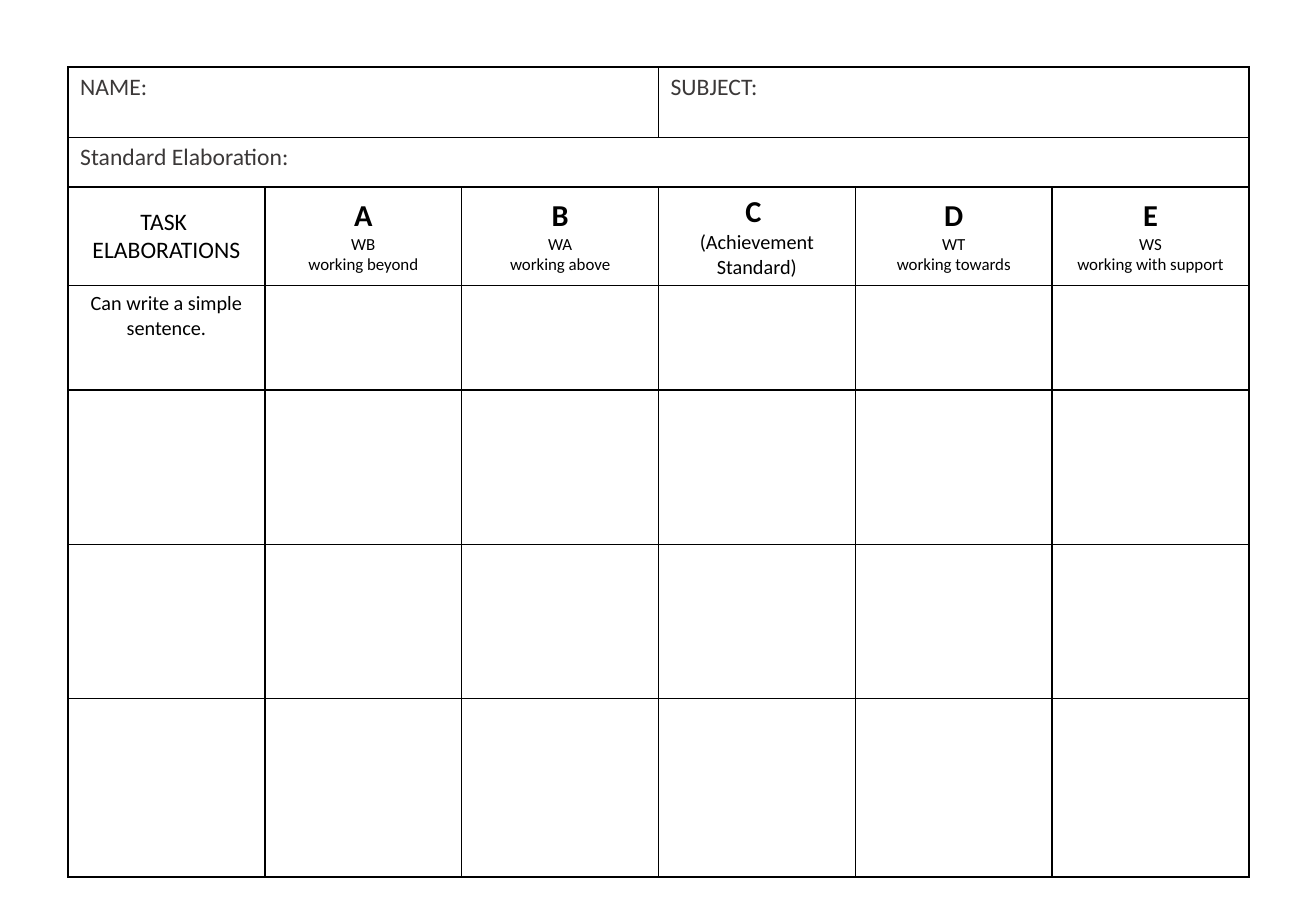
from lxml import etree
from pptx import Presentation
from pptx.dml.color import RGBColor
from pptx.enum.text import MSO_ANCHOR, PP_ALIGN
from pptx.oxml.ns import qn
from pptx.util import Inches, Pt

LEFT, CENTER = PP_ALIGN.LEFT, PP_ALIGN.CENTER
TOP, MIDDLE = MSO_ANCHOR.TOP, MSO_ANCHOR.MIDDLE
BLACK = RGBColor(0, 0, 0)
GREY = RGBColor(0x3B, 0x38, 0x38)
WHITE = RGBColor(255, 255, 255)
FONT = "Calibri"

FIELDS = [
    (0, 0, 2, "NAME:"),
    (0, 3, 5, "SUBJECT:"),
    (1, 0, 5, "Standard Elaboration:"),
]
TASK = ["TASK ", "ELABORATIONS"]
GRADES = [
    ("A", 10, ["WB", "working beyond"]),
    ("B", 10, ["WA", "working above"]),
    ("C ", 12, ["(Achievement Standard)"]),
    ("D", 10, ["WT", "working towards"]),
    ("E", 10, ["WS", "working with support"]),
]
GOALS = ["Can write a simple sentence."]
ROWS = [0.58, 0.41, 0.81, 0.86, 1.27, 1.27, 1.47]
COLS = 6
COL_W = 1.62
HEAD_ROW, GOAL_ROW = 2, 3


def write(cell, lines, size=14, color=BLACK, align=CENTER, anchor=TOP, lead=None):
    cell.vertical_anchor = anchor
    frame = cell.text_frame
    for i, line in enumerate(lines):
        para = frame.paragraphs[0] if i == 0 else frame.add_paragraph()
        para.alignment = align
        run = para.add_run()
        run.text = line
        first = lead is not None and i == 0
        run.font.size = Pt(lead if first else size)
        run.font.bold = first
        run.font.name = FONT
        run.font.color.rgb = color


def frame_cell(cell):
    props = cell._tc.get_or_add_tcPr()
    for side in ("lnL", "lnR", "lnT", "lnB"):
        line = etree.SubElement(props, qn("a:" + side), w=str(Pt(1)))
        fill = etree.SubElement(line, qn("a:solidFill"))
        etree.SubElement(fill, qn("a:srgbClr"), val=str(BLACK))
    cell.fill.solid()
    cell.fill.fore_color.rgb = WHITE


def main():
    deck = Presentation()
    deck.slide_width, deck.slide_height = Inches(10.83), Inches(7.5)
    slide = deck.slides.add_slide(deck.slide_layouts[6])
    table = slide.shapes.add_table(
        len(ROWS), COLS, Inches(0.56), Inches(0.55),
        Inches(COL_W * COLS), Inches(sum(ROWS))).table
    table.first_row = table.horz_banding = False
    for col in table.columns:
        col.width = Inches(COL_W)
    for row, height in zip(table.rows, ROWS):
        row.height = Inches(height)
    for cell in table.iter_cells():
        frame_cell(cell)

    for row, start, end, label in FIELDS:
        cell = table.cell(row, start)
        cell.merge(table.cell(row, end))
        write(cell, [label], color=GREY, align=LEFT)

    write(table.cell(HEAD_ROW, 0), TASK, anchor=MIDDLE)
    for col, (grade, size, notes) in enumerate(GRADES, 1):
        write(table.cell(HEAD_ROW, col), [grade] + notes,
              size=size, lead=18, anchor=MIDDLE)
    for row, goal in enumerate(GOALS, GOAL_ROW):
        cell = table.cell(row, 0)
        cell.margin_bottom = 0
        write(cell, [goal], size=12)

    deck.save("out.pptx")


if __name__ == "__main__":
    main()
